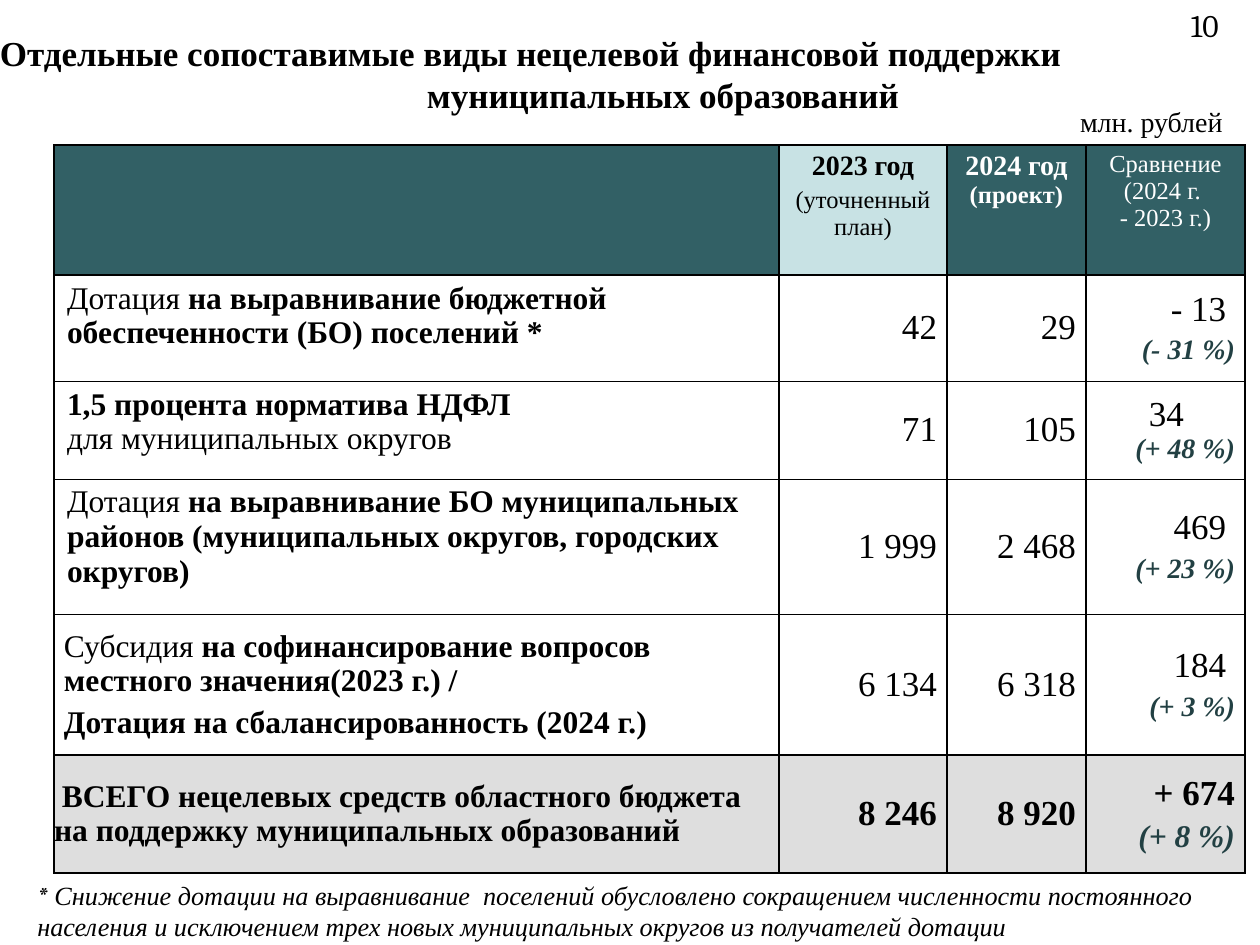
import copy

import pptx
import pptx.dml.color
import pptx.enum.text
import pptx.oxml
import pptx.oxml.ns
import pptx.util

RGB = pptx.dml.color.RGBColor
ALIGN = pptx.enum.text.PP_ALIGN
ANCHOR = pptx.enum.text.MSO_ANCHOR

BLACK = RGB(0x00, 0x00, 0x00)
WHITE = RGB(0xFF, 0xFF, 0xFF)
TEAL = RGB(0x32, 0x60, 0x65)
PALE_TEAL = RGB(0xC8, 0xE2, 0xE4)
DARK_TEAL = RGB(0x22, 0x40, 0x43)
GREY = RGB(0xDE, 0xDE, 0xDE)
SERIF = "Times New Roman"
PAGE_FONT = "Cambria"

# A paragraph is a list of runs; a run is its text and what differs from the base style.
BOLD = {"bold": True}
SMALL = {"size": 14}
CHANGE = {"size": 16, "bold": True, "italic": True, "color": DARK_TEAL}
TOTAL_CHANGE = {**CHANGE, "size": 18}

TITLE = ("Отдельные сопоставимые виды нецелевой финансовой поддержки\n"
         "муниципальных образований")
PAGE_NUMBER = "10"
UNIT = "млн. рублей"
FOOTNOTE = [("*", {"font": PAGE_FONT}),
            (" Снижение дотации на выравнивание  поселений обусловлено сокращением "
             "численности постоянного населения и исключением трех новых муниципальных "
             "округов из получателей дотации", {})]

# paragraphs, fill, text colour, side inset
HEADERS = [
    ([], TEAL, WHITE, 13),
    ([[("2023 год", BOLD)], [("(уточненный план)", SMALL)]], PALE_TEAL, BLACK, 13),
    ([[("2024 год", BOLD)], [("(проект)", {**BOLD, **SMALL})]], TEAL, WHITE, 13),
    ([[("Сравнение (2024 г. \n- 2023 г.)", SMALL)]], TEAL, WHITE, 5),
]
HEADER_GAPS = [0, 0.2, 0, 0]

# label, 2023, 2024, difference, change in percent
ROWS = [
    ([[("Дотация ", {}), ("на выравнивание бюджетной обеспеченности (БО) поселений *", BOLD)]],
     "42", "29", "- 13 ", "(- 31 %)"),
    ([[("1,5 процента норматива НДФЛ\n", BOLD), ("для муниципальных округов", {})]],
     "71", "105", "34", "(+ 48 %)"),
    ([[("Дотация ", {}), ("на выравнивание БО муниципальных районов "
                          "(муниципальных округов, городских округов)", BOLD)]],
     "1 999", "2 468", "469 ", "(+ 23 %)"),
    ([[("Субсидия ", {}), ("на софинансирование вопросов местного значения(2023 г.) /", BOLD)],
      [("Дотация на сбалансированность (2024 г.)", BOLD)]],
     "6 134", "6 318", "184 ", "(+ 3 %)"),
    ([[(" ", {}), ("ВСЕГО нецелевых средств областного бюджета "
                   "на поддержку муниципальных образований", BOLD)]],
     "8 246", "8 920", "+ 674", "(+ 8 %)"),
]
INCOME_TAX_ROW, SUBSIDY_ROW, TOTAL_ROW = 2, 4, 5

TABLE_LEFT, TABLE_TOP = 54, 145
COLUMN_WIDTHS = [725, 168, 139, 159]
ROW_HEIGHTS = [130, 106, 98, 135, 141, 118]


def px(length):
    return pptx.util.Emu(round(length * 914400 / 126))


def write(frame, paragraphs, size, align=ALIGN.LEFT, color=BLACK, gap=0.2, **base):
    """Fill the frame; gap is the space between paragraphs as a share of the text size."""
    for number, runs in enumerate(paragraphs):
        paragraph = frame.add_paragraph() if number else frame.paragraphs[0]
        paragraph.alignment = align
        for text, changes in runs:
            style = {"size": size, "color": color, "font": SERIF,
                     "bold": False, "italic": False, **base, **changes}
            for line_number, line in enumerate(text.split("\n")):
                if line_number:
                    paragraph.add_line_break()
                    paragraph._p[-1].append(copy.deepcopy(run._r.get_or_add_rPr()))
                if not line:
                    continue
                run = paragraph.add_run()
                run.text = line
                run.font.size = pptx.util.Pt(style["size"])
                run.font.name = style["font"]
                run.font.bold = style["bold"]
                run.font.italic = style["italic"]
                run.font.color.rgb = style["color"]
        if number:
            first_size = runs[0][1].get("size", size)
            paragraph.space_before = pptx.util.Pt(round(first_size * gap, 1))


def add_text(slide, box, paragraphs, size, anchor=ANCHOR.TOP, **style):
    frame = slide.shapes.add_textbox(*map(px, box)).text_frame
    frame.word_wrap = True
    frame.vertical_anchor = anchor
    write(frame, paragraphs, size, **style)
    return frame


def style_cell(cell, fill, insets, anchor, top, bottom):
    """Set fill, insets (left, top, right, bottom) and borders in points."""
    cell.fill.solid()
    cell.fill.fore_color.rgb = fill
    cell.margin_left, cell.margin_top, cell.margin_right, cell.margin_bottom = map(px, insets)
    cell.vertical_anchor = anchor
    properties = cell._tc.get_or_add_tcPr()
    for place, (side, width) in enumerate([("L", 1), ("R", 1), ("T", top), ("B", bottom)]):
        properties.insert(place, pptx.oxml.parse_xml(
            f'<a:ln{side} {pptx.oxml.ns.nsdecls("a")} w="{pptx.util.Pt(width)}">'
            f'<a:solidFill><a:srgbClr val="{BLACK}"/></a:solidFill></a:ln{side}>'))


def add_support_table(slide):
    table = slide.shapes.add_table(
        len(ROW_HEIGHTS), len(COLUMN_WIDTHS), px(TABLE_LEFT), px(TABLE_TOP),
        px(sum(COLUMN_WIDTHS)), px(sum(ROW_HEIGHTS))).table
    table.first_row = table.horz_banding = False
    for column, width in zip(table.columns, COLUMN_WIDTHS):
        column.width = px(width)
    for row, height in zip(table.rows, ROW_HEIGHTS):
        row.height = px(height)

    for column, (paragraphs, fill, color, side) in enumerate(HEADERS):
        cell = table.cell(0, column)
        style_cell(cell, fill, (side, 6, side, 6), ANCHOR.TOP, 1, 1)
        write(cell.text_frame, paragraphs, 16, ALIGN.CENTER, color, HEADER_GAPS[column])

    for row, (label, before, after, difference, percent) in enumerate(ROWS, 1):
        total = row == TOTAL_ROW
        fill = GREY if total else WHITE
        top = 1 if row in (1, TOTAL_ROW) else 0.25
        bottom = 1 if row >= SUBSIDY_ROW else 0.25
        edge = 0 if total else 6
        label_left = {SUBSIDY_ROW: 10, TOTAL_ROW: 0}.get(row, 13)

        cell = table.cell(row, 0)
        style_cell(cell, fill, (label_left, edge, 2 * edge, edge),
                   ANCHOR.MIDDLE if row >= SUBSIDY_ROW else ANCHOR.TOP, top, bottom)
        write(cell.text_frame, label, 18)

        change = [[(difference, {})], [(percent, TOTAL_CHANGE if total else CHANGE)]]
        figures = [[[(before, {})]], [[(after, {})]], change]
        for column, paragraphs in enumerate(figures, 1):
            cell = table.cell(row, column)
            style_cell(cell, fill, (2 * edge, edge, 10, edge), ANCHOR.MIDDLE, top, bottom)
            write(cell.text_frame, paragraphs, 20, ALIGN.RIGHT, bold=total,
                  gap=0 if row == INCOME_TAX_ROW else 0.2)
        if row == INCOME_TAX_ROW:
            cell.text_frame.paragraphs[0].alignment = ALIGN.CENTER


def main():
    deck = pptx.Presentation()
    deck.slide_width, deck.slide_height = px(1260), px(945)
    slide = deck.slides.add_slide(deck.slide_layouts[6])

    title = add_text(slide, (-15, 40, 1260, 67), [[(TITLE, BOLD)]], 20, ANCHOR.MIDDLE)
    title.margin_left = px(15)
    hanging = title.paragraphs[0]._p.get_or_add_pPr()
    hanging.set("marL", str(px(427)))
    hanging.set("indent", str(-px(427)))

    add_support_table(slide)
    add_text(slide, (1126, 0, 105, 50), [[(PAGE_NUMBER, {})]], 18, ANCHOR.BOTTOM,
             align=ALIGN.RIGHT, font=PAGE_FONT)
    add_text(slide, (1018, 98, 217, 47), [[(UNIT, {})]], 16, align=ALIGN.RIGHT)
    add_text(slide, (25, 873, 1235, 77), [FOOTNOTE], 15, italic=True)
    deck.save("out.pptx")


if __name__ == "__main__":
    main()
